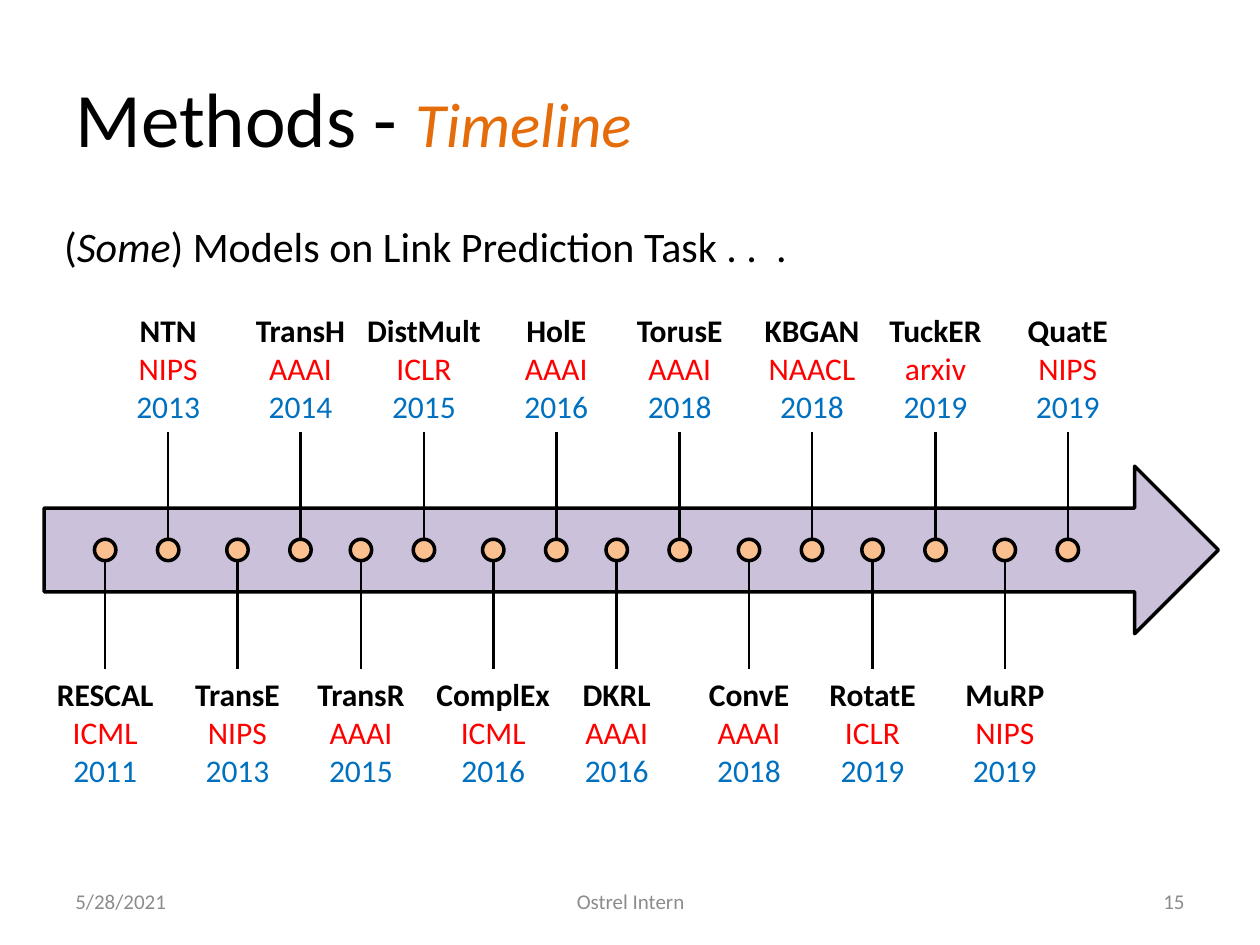
from lxml.etree import SubElement
from pptx import Presentation
from pptx.dml.color import RGBColor
from pptx.enum.shapes import MSO_CONNECTOR, MSO_SHAPE
from pptx.enum.text import MSO_ANCHOR, MSO_AUTO_SIZE, PP_ALIGN
from pptx.oxml.ns import qn
from pptx.util import Inches, Pt

deck = Presentation()
deck.slide_width, deck.slide_height = Inches(10), Inches(7.5)
page = deck.slides.add_slide(deck.slide_layouts[6])

# The grid has 100 columns and 75 rows of square cells
CELL = deck.slide_width / 100


def cells(*counts):
    return [round(count * CELL) for count in counts]


def add_text(place, paragraphs, align=PP_ALIGN.LEFT, anchor=MSO_ANCHOR.TOP):
    """Each paragraph is a list of (text, size, colour, bold, italic)."""
    box = page.shapes.add_textbox(*cells(*place))
    frame = box.text_frame
    frame.word_wrap = True
    frame.vertical_anchor = anchor
    if anchor == MSO_ANCHOR.TOP:
        frame.auto_size = MSO_AUTO_SIZE.SHAPE_TO_FIT_TEXT
    for index, spans in enumerate(paragraphs):
        para = frame.add_paragraph() if index else frame.paragraphs[0]
        para.alignment = align
        for text, size, colour, bold, italic in spans:
            span = para.add_run()
            span.text = text
            span.font.name = "Calibri"
            span.font.size = Pt(size)
            span.font.bold, span.font.italic = bold, italic
            span.font.color.rgb = RGBColor.from_string(colour)


# Title and subtitle
add_text((5, 3, 90, 12.5), [[("Methods - ", 44, "000000", False, False),
                             ("Timeline", 36, "E46C0A", False, True)]],
         anchor=MSO_ANCHOR.MIDDLE)
add_text((4.1, 17, 61.5, 5), [[
    ("(", 24, "000000", False, False),
    ("Some", 24, "000000", False, True),
    (") Models on Link Prediction Task . .  .", 24, "000000", False, False)]])

# Footer
for left, width, text, align in [
        (5, 23.3, "5/28/2021", PP_ALIGN.LEFT),
        (34.2, 31.7, "Ostrel Intern", PP_ALIGN.CENTER),
        (71.7, 23.3, "15", PP_ALIGN.RIGHT)]:
    add_text((left, 69.5, width, 4), [[(text, 12, "8C8C8C", False, False)]],
             align, MSO_ANCHOR.MIDDLE)

# Models below and above the arrow, one pair per step
pairs = [
    (("RESCAL", "ICML", "2011"), ("NTN", "NIPS", "2013")),
    (("TransE", "NIPS", "2013"), ("TransH", "AAAI", "2014")),
    (("TransR", "AAAI", "2015"), ("DistMult", "ICLR", "2015")),
    (("ComplEx", "ICML", "2016"), ("HolE", "AAAI", "2016")),
    (("DKRL", "AAAI", "2016"), ("TorusE", "AAAI", "2018")),
    (("ConvE", "AAAI", "2018"), ("KBGAN", "NAACL", "2018")),
    (("RotatE", "ICLR", "2019"), ("TuckER", "arxiv", "2019")),
    (("MuRP", "NIPS", "2019"), ("QuatE", "NIPS", "2019")),
]
DOT = 1.7
MIDDLE = 43.65
# Side: shift from the pair's start, label top, label width, line start, line end
sides = [(0, 53.1, 12, MIDDLE + DOT / 2, 53.1),
         (5, 24.2, 11.3, MIDDLE - DOT / 2, 34.3)]

# Pairs start 10.5 and 9.8 columns apart in turn
events = [(8.35 + 20.3 * (index // 2) + 10.5 * (index % 2) + side[0], model, side)
          for index, pair in enumerate(pairs)
          for model, side in zip(pair, sides)]

# Arrow and dots
shapes = [(MSO_SHAPE.RIGHT_ARROW, (3.5, 37, 93.2, 13.3), "CCC1DA")]
shapes += [(MSO_SHAPE.OVAL, (center - DOT / 2, MIDDLE - DOT / 2, DOT, DOT), "FAC090")
           for center, model, side in events]
for kind, place, colour in shapes:
    shape = page.shapes.add_shape(kind, *cells(*place))
    shape.shadow.inherit = False
    shape.fill.solid()
    shape.fill.fore_color.rgb = RGBColor.from_string(colour)
    shape.line.color.rgb = RGBColor.from_string("000000")
    shape.line.width = Pt(2)

# Leader lines and labels
for center, model, (shift, top, width, start, end) in events:
    line = page.shapes.add_connector(MSO_CONNECTOR.STRAIGHT,
                                     *cells(center, start, center, end))
    line.line.color.rgb = RGBColor.from_string("000000")
    line.line.width = Pt(1.5)
    SubElement(line._element.spPr, qn("a:effectLst"))
    name, venue, year = model
    add_text((center - width / 2, top, width, 10.1),
             [[(name, 18, "000000", True, False)],
              [(venue, 18, "FF0000", False, False)],
              [(year, 18, "0070C0", False, False)]],
             PP_ALIGN.CENTER)

deck.save("out.pptx")
